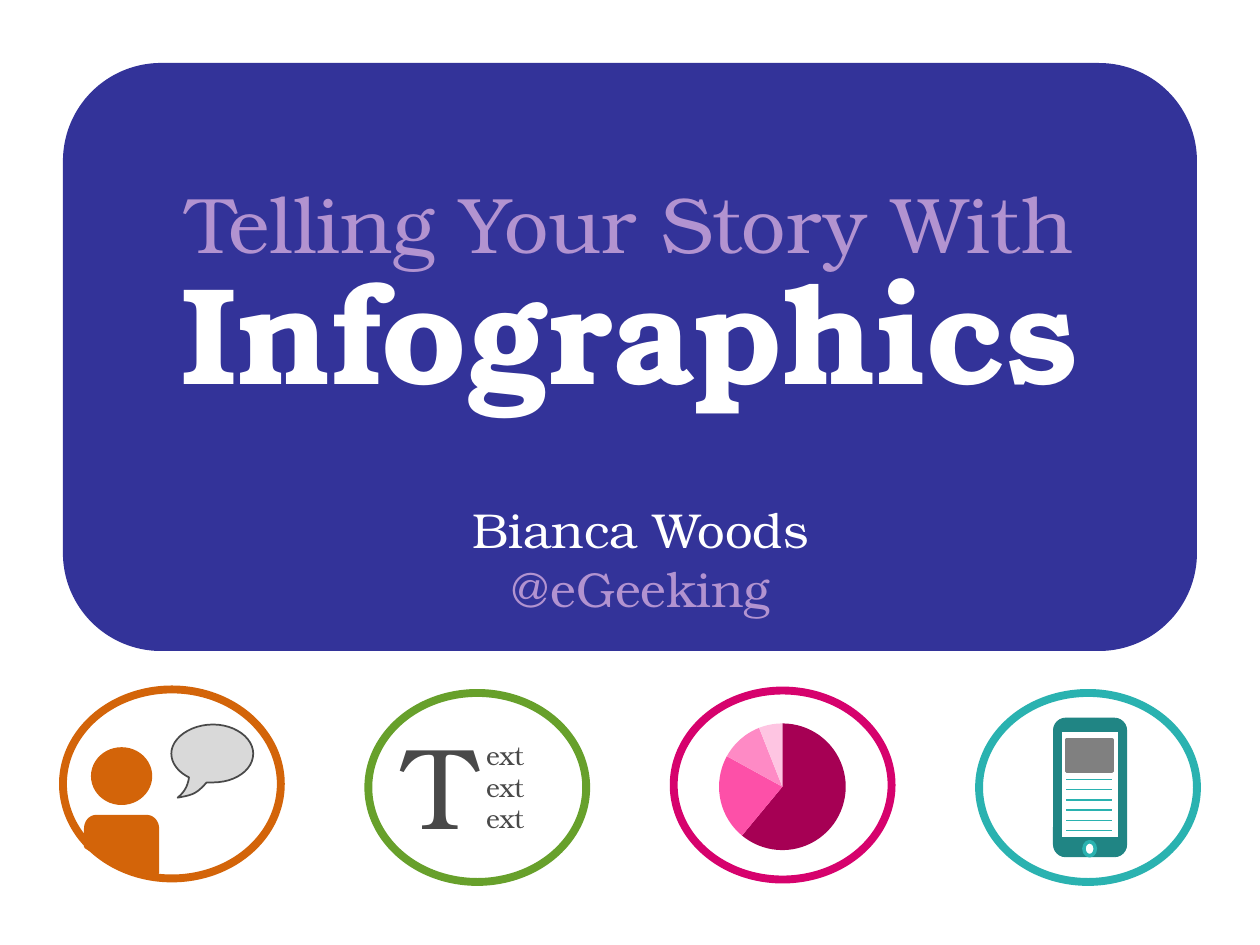
import pptx
import pptx.chart.data
import pptx.dml.color
import pptx.enum.chart
import pptx.enum.shapes
import pptx.enum.text
import pptx.oxml
import pptx.oxml.ns
import pptx.util
from dataclasses import dataclass
from lxml import etree

Pt = pptx.util.Pt
KIND = pptx.enum.shapes.MSO_SHAPE
ALIGN = pptx.enum.text.PP_ALIGN
ANCHOR = pptx.enum.text.MSO_ANCHOR


@dataclass(frozen=True)
class Theme:
    font: str = "TeX Gyre Bonum"
    white: str = "FFFFFF"
    panel: str = "333399"
    lilac: str = "B293D0"
    text: str = "494949"
    bubble: str = "D9D9D9"
    grey: str = "808080"
    orange: str = "D36409"
    green: str = "67A02B"
    pink: str = "D6026D"
    teal: str = "2AB2B0"
    phone: str = "208584"
    slices: tuple = ("A60054", "FD50A8", "FE8AC5", "FEC5E2")
    title_size: float = 79
    subtitle_size: float = 45
    name_size: float = 28
    initial_size: float = 66
    small_size: float = 15
    chart_size: float = 18


def color(value):
    return pptx.dml.color.RGBColor.from_string(value)


def flatten(start, segments, steps=12):
    """Turn lines (x, y) and cubic curves (three points) into plain points."""
    points = [start]
    for segment in segments:
        if len(segment) == 2:
            points.append(segment)
            continue
        x0, y0 = points[-1]
        x1, y1, x2, y2, x3, y3 = segment
        for step in range(1, steps + 1):
            t = step / steps
            a, b, c, d = (1 - t) ** 3, 3 * t * (1 - t) ** 2, 3 * t * t * (1 - t), t ** 3
            points.append((a * x0 + b * x1 + c * x2 + d * x3,
                           a * y0 + b * y1 + c * y2 + d * y3))
    return points


class SlideBuilder:
    def __init__(self, slide, theme):
        self.slide, self.theme = slide, theme
        self.shapes = slide.shapes

    def begin_group(self):
        self.shapes = self.slide.shapes.add_group_shape().shapes

    def end_group(self):
        self.shapes = self.slide.shapes

    def paint(self, shape, fill, line=None, width=0):
        shape.shadow.inherit = False
        shape.fill.solid()
        shape.fill.fore_color.rgb = color(fill)
        if line:
            shape.line.color.rgb = color(line)
            shape.line.width = Pt(width)
        else:
            shape.line.fill.background()

    def shape(self, kind, box, fill, line=None, width=0):
        shape = self.shapes.add_shape(kind, *map(Pt, box))
        self.paint(shape, fill, line, width)

    def outline(self, start, segments, fill, line, width):
        points = [(Pt(x), Pt(y)) for x, y in flatten(start, segments)]
        builder = self.shapes.build_freeform(*points[0], scale=1.0)
        builder.add_line_segments(points[1:], close=True)
        self.paint(builder.convert_to_shape(), fill, line, width)

    def rule(self, left, right, y, line, width):
        connector = self.shapes.add_connector(
            pptx.enum.shapes.MSO_CONNECTOR.STRAIGHT, Pt(left), Pt(y), Pt(right), Pt(y))
        connector.line.color.rgb = color(line)
        connector.line.width = Pt(width)
        etree.SubElement(connector.element.spPr, pptx.oxml.ns.qn("a:effectLst"))

    def fill_text(self, frame, lines, size, align, bold=False, **frame_format):
        frame_format = {"word_wrap": True, "auto_size": pptx.enum.text.MSO_AUTO_SIZE.NONE,
                        "vertical_anchor": ANCHOR.TOP, **frame_format}
        for name, value in frame_format.items():
            setattr(frame, name, value)
        for index, (text, text_color) in enumerate(lines):
            paragraph = frame.paragraphs[0] if index == 0 else frame.add_paragraph()
            for name, value in {"alignment": align, "space_before": Pt(0)}.items():
                setattr(paragraph, name, value)
            run = paragraph.add_run()
            run.text = text
            font_format = {"name": self.theme.font, "size": Pt(size), "bold": bold}
            for name, value in font_format.items():
                setattr(run.font, name, value)
            run.font.color.rgb = color(text_color)

    def text(self, box, lines, size, align=ALIGN.LEFT, **frame_format):
        shape = self.shapes.add_textbox(*map(Pt, box))
        self.fill_text(shape.text_frame, lines, size, align, **frame_format)

    def placeholder(self, shape, box, lines, size, **text_format):
        for name, value in zip(("left", "top", "width", "height"), box):
            setattr(shape, name, Pt(value))
        self.fill_text(shape.text_frame, lines, size, ALIGN.CENTER, **text_format)
        self.slide.shapes.element.append(shape.element)  # in front of the panel

    def pie(self, box, values, colors):
        data = pptx.chart.data.CategoryChartData()
        data.categories = [str(number) for number in range(1, len(values) + 1)]
        data.add_series("Series 1", values)
        chart = self.shapes.add_chart(
            pptx.enum.chart.XL_CHART_TYPE.PIE, *map(Pt, box), data).chart
        chart.has_legend = chart.has_title = False
        chart.font.name, chart.font.size = self.theme.font, Pt(self.theme.chart_size)
        chart.font.color.rgb = color(self.theme.text)
        plot = chart.plots[0]
        plot.vary_by_categories = True
        for index, value in enumerate(colors):
            point = plot.series[0].points[index]
            point.format.fill.solid()
            point.format.fill.fore_color.rgb = color(value)
            point.format.line.fill.background()
        # Fixed, centred plot area
        area = chart.element.find(".//" + pptx.oxml.ns.qn("c:plotArea"))
        for old in area.findall(pptx.oxml.ns.qn("c:layout")):
            area.remove(old)
        parts = "".join(f'<c:{tag} val="{value}"/>' for tag, value in (
            ("layoutTarget", "inner"), ("xMode", "edge"), ("yMode", "edge"),
            ("x", 0.24), ("y", 0.11), ("w", 0.52), ("h", 0.78)))
        area.insert(0, pptx.oxml.parse_xml(
            f'<c:layout {pptx.oxml.ns.nsdecls("c")}>'
            f'<c:manualLayout>{parts}</c:manualLayout></c:layout>'))


def main():
    presentation = pptx.Presentation()
    presentation.slide_width, presentation.slide_height = Pt(720), Pt(540)
    slide = presentation.slides.add_slide(presentation.slide_layouts[0])
    theme = Theme()
    builder = SlideBuilder(slide, theme)

    def ring(index, top, line):
        builder.shape(KIND.OVAL, (36 + 174.5 * index, top, 124.5, 108), theme.white, line, 4.5)

    # Title panel
    builder.shape(KIND.ROUNDED_RECTANGLE, (36, 36, 648, 336), theme.panel)
    builder.placeholder(slide.shapes.title, (36, 130.3, 648, 116),
                        [("Infographics", theme.white)], theme.title_size,
                        bold=True, vertical_anchor=ANCHOR.MIDDLE)
    builder.placeholder(slide.placeholders[1], (36, 96, 648, 54),
                        [("Telling Your Story With", theme.lilac)], theme.subtitle_size)
    builder.text((72, 282, 588, 75), [("Bianca Woods", theme.white), ("@eGeeking", theme.lilac)],
                 theme.name_size, ALIGN.CENTER)

    # Speaker icon
    builder.begin_group()
    ring(0, 394, theme.orange)
    builder.outline((49, 473.8), [
        (49, 469.4, 51.8, 466.6, 55.4, 466.6), (83.5, 466.6),
        (87.1, 466.6, 90, 469.4, 90, 473.8), (90, 499),
        (82.8, 501.1, 56.2, 488.9, 49, 483.8)], theme.orange, theme.orange, 2)
    builder.shape(KIND.OVAL, (53, 428, 33, 31), theme.orange, theme.orange, 2)
    builder.outline((121.7, 414), [
        (134.6, 414, 144.7, 421.9, 144.7, 430.6), (144.7, 439.9, 134.6, 447.1, 121.7, 447.1),
        (118.1, 447.1), (112.3, 453.6, 110.2, 454.3, 101.5, 455.8),
        (105.1, 452.9, 107.3, 449.3, 108, 444.2), (102.2, 441.4, 97.9, 436.3, 97.9, 430.6),
        (97.9, 421.9, 108.7, 414, 121.7, 414)], theme.bubble, theme.text, 1)

    # Text icon
    builder.begin_group()
    ring(1, 396, theme.green)
    builder.text((229, 404.6, 56, 87), [("T", theme.text)], theme.initial_size,
                 margin_left=Pt(2), margin_right=Pt(0))
    builder.text((270.7, 419, 50, 62), [("ext", theme.text)] * 3, theme.small_size)
    builder.end_group()

    # Pie icon
    ring(2, 394.6, theme.pink)
    builder.pie((377.3, 403.2, 139.7, 92.9), (61, 22, 11, 6), theme.slices)

    # Phone icon
    builder.begin_group()
    ring(3, 396, theme.teal)
    builder.shape(KIND.ROUNDED_RECTANGLE, (602, 410.4, 41.8, 79.2), theme.phone, theme.phone, 0.5)
    builder.shape(KIND.RECTANGLE, (605.8, 417.4, 34.2, 61.9), theme.white, theme.phone, 2)
    builder.shape(KIND.RECTANGLE, (609.4, 422.8, 26, 18), theme.grey, theme.grey, 2)
    for index in range(6):
        builder.rule(609.4, 635.6, 445.5 + 5.8 * index, theme.teal, 0.75)
    builder.shape(KIND.OVAL, (619.4, 481, 6.5, 8), theme.white, theme.teal, 2)

    presentation.save("out.pptx")


if __name__ == "__main__":
    main()
